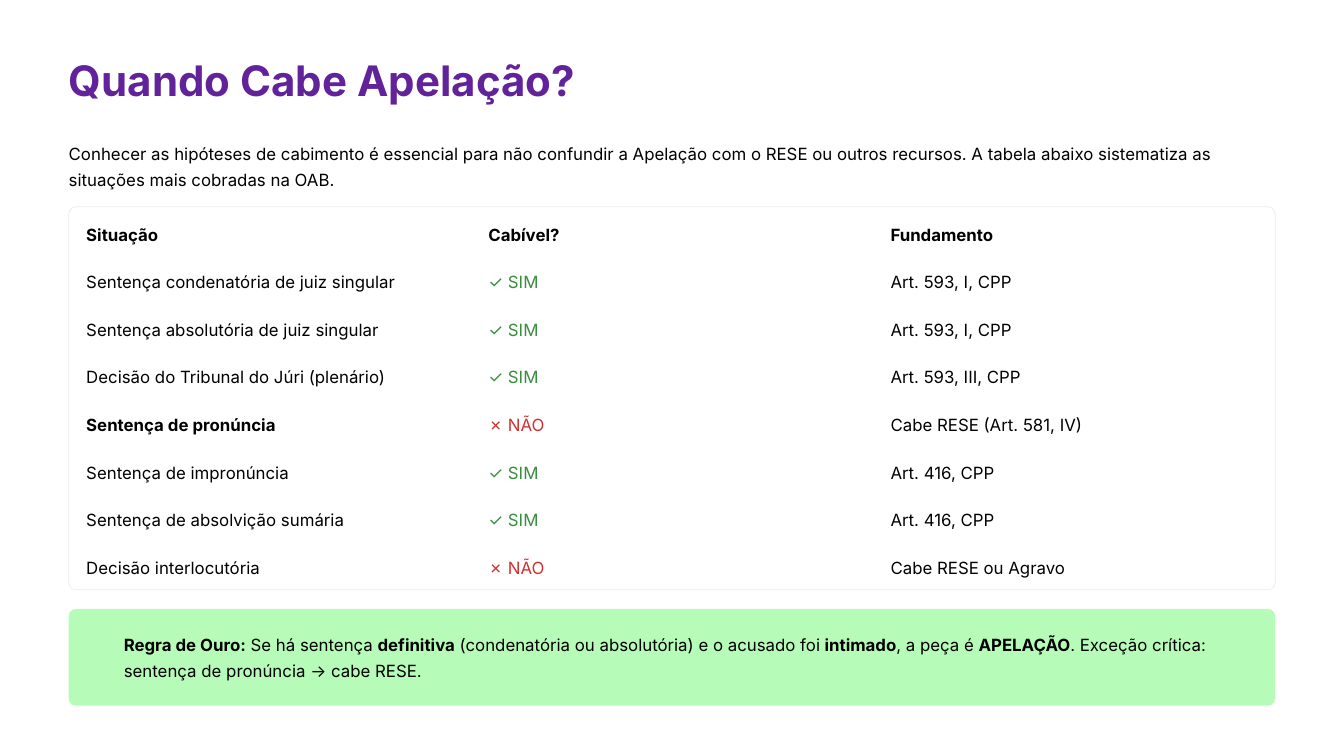
from lxml.etree import SubElement
from pptx import Presentation
from pptx.dml.color import RGBColor
from pptx.enum.shapes import MSO_SHAPE as Shape
from pptx.enum.text import MSO_ANCHOR as Anchor
from pptx.oxml.ns import qn
from pptx.util import Cm, Pt

# Content
TITLE = "Quando Cabe Apelação?"
INTRO = (
    "Conhecer as hipóteses de cabimento é essencial para não confundir a Apelação "
    "com o RESE ou outros recursos. A tabela abaixo sistematiza as situações mais "
    "cobradas na OAB."
)
YES, NO = "✓ SIM", "✗ NÃO"
ROWS = [
    ("Situação", "Cabível?", "Fundamento"),
    ("Sentença condenatória de juiz singular", YES, "Art. 593, I, CPP"),
    ("Sentença absolutória de juiz singular", YES, "Art. 593, I, CPP"),
    ("Decisão do Tribunal do Júri (plenário)", YES, "Art. 593, III, CPP"),
    ("Sentença de pronúncia", NO, "Cabe RESE (Art. 581, IV)"),
    ("Sentença de impronúncia", YES, "Art. 416, CPP"),
    ("Sentença de absolvição sumária", YES, "Art. 416, CPP"),
    ("Decisão interlocutória", NO, "Cabe RESE ou Agravo"),
]
BOLD_CELLS = {*ROWS[0], "Sentença de pronúncia"}
GOLDEN_RULE = [  # (text, bold)
    ("Regra de Ouro:", True),
    (" Se há sentença ", False),
    ("definitiva", True),
    (" (condenatória ou absolutória) e o acusado foi ", False),
    ("intimado", True),
    (", a peça é ", False),
    ("APELAÇÃO", True),
    (". Exceção crítica: sentença de pronúncia → cabe RESE.", False),
]

THEME = {
    "font": "Inter",
    "title": RGBColor(0x62, 0x22, 0x99),
    "text": RGBColor(0, 0, 0),
    "yes": RGBColor(0x38, 0x8E, 0x3C),
    "no": RGBColor(0xD3, 0x2F, 0x2F),
    "callout": RGBColor(0xB6, 0xFC, 0xB8),
    "title_size": Pt(22.5),
    "title_spacing": Pt(28.5),
    "body_size": Pt(9),
    "body_spacing": Pt(14),
}
MARK_COLORS = {YES: THEME["yes"], NO: THEME["no"]}

# Layout, in centimetres
LEFT, WIDTH = 1.3, 22.8
TABLE_TOP, ROW_HEIGHT = 3.94, 0.9
CELL_LEFT, CELL_TOP = 0.33, 0.2


def format_paragraph(paragraph, kind="body", color=THEME["text"], bold=False):
    paragraph.line_spacing = THEME[f"{kind}_spacing"]
    for run in paragraph.runs:
        run.font.name = THEME["font"]
        run.font.size = THEME[f"{kind}_size"]
        run.font.color.rgb = color
        run.font.bold = bold


def add_text(slide, left, top, width, height, text="", wrap=True):
    box = slide.shapes.add_textbox(Cm(left), Cm(top), Cm(width), Cm(height))
    frame = box.text_frame
    frame.margin_left = frame.margin_right = frame.margin_top = frame.margin_bottom = 0
    frame.word_wrap = wrap
    frame.text = text
    return frame.paragraphs[0]


def add_panel(slide, top, height, radius):
    panel = slide.shapes.add_shape(
        Shape.ROUNDED_RECTANGLE, Cm(LEFT), Cm(top), Cm(WIDTH), Cm(height))
    panel.adjustments[0] = radius
    panel.shadow.inherit = False
    return panel


def add_cases_table(slide):
    columns = len(ROWS[0])
    table = slide.shapes.add_table(
        len(ROWS), columns, Cm(LEFT), Cm(TABLE_TOP),
        Cm(WIDTH), Cm(ROW_HEIGHT * len(ROWS))).table
    table.first_row = table.horz_banding = False
    for column in table.columns:
        column.width = Cm(WIDTH / columns)
    for row, texts in zip(table.rows, ROWS):
        row.height = Cm(ROW_HEIGHT)
        for cell, text in zip(row.cells, texts):
            cell.fill.background()
            cell.margin_left, cell.margin_top = Cm(CELL_LEFT), Cm(CELL_TOP)
            cell.margin_right = cell.margin_bottom = 0
            cell.vertical_anchor = Anchor.TOP
            cell.text = text
            format_paragraph(
                cell.text_frame.paragraphs[0],
                color=MARK_COLORS.get(text, THEME["text"]),
                bold=text in BOLD_CELLS)


def add_table_frame(slide):
    frame = add_panel(slide, 3.91, 7.24, 0.019)
    frame.fill.background()
    frame.line.width = Pt(0.38)
    frame.line.color.rgb = THEME["text"]
    color = frame.line._get_or_add_ln().find(".//" + qn("a:srgbClr"))
    SubElement(color, qn("a:alpha"), val="8000")


def add_callout(slide):
    panel = add_panel(slide, 11.51, 1.83, 0.075)
    panel.fill.solid()
    panel.fill.fore_color.rgb = THEME["callout"]
    panel.line.fill.background()
    paragraph = add_text(slide, 2.34, 11.89, 21.44, 1)
    for text, _ in GOLDEN_RULE:
        paragraph.add_run().text = text
    format_paragraph(paragraph)
    for run, (_, bold) in zip(paragraph.runs, GOLDEN_RULE):
        run.font.bold = bold


def main():
    presentation = Presentation()
    presentation.slide_width, presentation.slide_height = Cm(25.4), Cm(14.29)
    slide = presentation.slides.add_slide(presentation.slide_layouts[6])

    # Heading and introduction
    title = add_text(slide, LEFT, 0.97, 9.73, 1.01, TITLE, wrap=False)
    format_paragraph(title, "title", THEME["title"], bold=True)
    format_paragraph(add_text(slide, LEFT, 2.6, WIDTH, 1, INTRO))

    # Table with its rounded outline, then the golden rule
    add_cases_table(slide)
    add_table_frame(slide)
    add_callout(slide)

    presentation.save("out.pptx")


if __name__ == "__main__":
    main()
